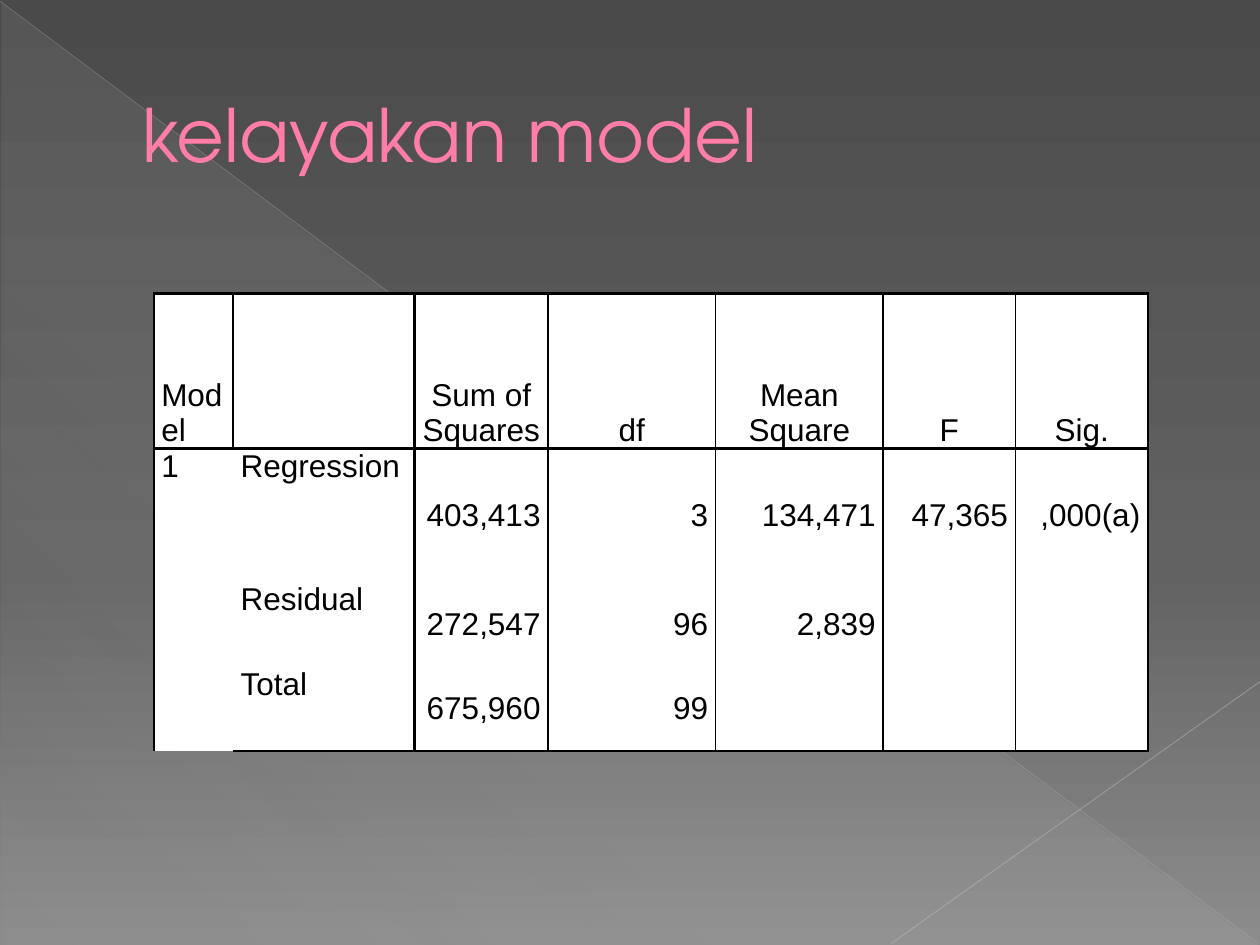
import pptx
import pptx.util
import pptx.oxml
from pptx.dml.color import RGBColor
from pptx.enum.shapes import MSO_CONNECTOR, MSO_SHAPE
from pptx.enum.text import MSO_ANCHOR, PP_ALIGN
from pptx.oxml.ns import nsdecls, qn
from pptx.util import Inches, Pt

BLACK = RGBColor(0x00, 0x00, 0x00)
WHITE = RGBColor(0xFF, 0xFF, 0xFF)
PINK = RGBColor(0xFF, 0x7D, 0xA7)
PALE = RGBColor(0xD2, 0xD2, 0xD2)
GREY = RGBColor(0xBF, 0xBF, 0xBF)
SILVER = RGBColor(0xC6, 0xC6, 0xC6)
DARK = RGBColor(0x4A, 0x4A, 0x4A)
MID = RGBColor(0x62, 0x62, 0x62)
LIGHT = RGBColor(0x8C, 0x8C, 0x8C)

COLS = [0.63, 1.44, 1.06, 1.33, 1.33, 1.05, 1.05]
ROWS = [1.23, 1.06, 0.67, 0.67]
DATA = [
    ["Model", "", "Sum of Squares", "df", "Mean Square", "F", "Sig."],
    ["1", "Regression", "403,413", "3", "134,471", "47,365", ",000(a)"],
    ["", "Residual", "272,547", "96", "2,839", "", ""],
    ["", "Total", "675,960", "99", "", "", ""],
]


def blend(fill, stops, angle):
    """Set a linear gradient from (position, colour, opacity) in percent."""
    fill.gradient()
    fill.gradient_angle = -angle % 360
    grad = fill.gradient_stops[0]._gs.getparent()
    for old in list(grad):
        grad.remove(old)
    for place, color, alpha in stops:
        grad.append(pptx.oxml.parse_xml(
            f'<a:gs {nsdecls("a")} pos="{place * 1000}"><a:srgbClr val="{color}">'
            f'<a:alpha val="{alpha * 1000}"/></a:srgbClr></a:gs>'))


def add_line(slide, start, end, color, width, alpha):
    line = slide.shapes.add_connector(
        MSO_CONNECTOR.STRAIGHT, *map(Inches, start + end))
    line.line.color.rgb = color
    line.line.width = Pt(width)
    props = line._element.spPr
    tint = props.find(".//" + qn("a:srgbClr"))
    tint.append(pptx.oxml.parse_xml(
        f'<a:alpha {nsdecls("a")} val="{alpha * 1000}"/>'))
    props.append(pptx.oxml.parse_xml(f'<a:effectLst {nsdecls("a")}/>'))


def add_back(slide, width, height):
    blend(slide.background.fill,
          [(0, DARK, 100), (60, MID, 100), (100, LIGHT, 100)], 90)
    wedge = slide.shapes.add_shape(
        MSO_SHAPE.RIGHT_TRIANGLE, Inches(0.01), Inches(0.02),
        Inches(width - 0.02), Inches(height - 0.02))
    wedge.shadow.inherit = False
    wedge.line.fill.background()
    blend(wedge.fill, [(0, PALE, 10), (70, PALE, 8), (100, PALE, 1)], 133)
    add_line(slide, (0, 0.01), (width - 0.01, height - 0.01), GREY, 0.39, 35)
    add_line(slide, (width, 5.41), (7.07, height - 0.01), SILVER, 0.47, 45)


def add_title(slide, text, left, top, width, height):
    box = slide.shapes.add_textbox(*map(Inches, (left, top, width, height)))
    frame = box.text_frame
    frame.word_wrap = True
    frame.vertical_anchor = MSO_ANCHOR.MIDDLE
    frame.text = text
    para = frame.paragraphs[0]
    para._p.get_or_add_pPr().set("marL", str(Inches(0.53)))
    font = para.runs[0].font
    font.name = "TeX Gyre Adventor"
    font.size = Pt(42)
    font.color.rgb = PINK


def upright(row, edge):
    """Width of the vertical rule at a column edge, 0 for none."""
    if edge == 1:
        return 1.5 if row == 0 else 0
    return 1.5 if edge in (0, 2, len(COLS)) else 1


def level(edge):
    """Width of the horizontal rule at a row edge, 0 for none."""
    return 1.5 if edge in (0, 1, len(ROWS)) else 0


def set_rules(cell, row, col):
    sides = {"lnL": upright(row, col), "lnR": upright(row, col + 1),
             "lnT": level(row), "lnB": level(row + 1)}
    props = cell._tc.get_or_add_tcPr()
    for place, (side, width) in enumerate(sides.items()):
        paint = (f'<a:solidFill><a:srgbClr val="{BLACK}"/></a:solidFill>'
                 if width else "<a:noFill/>")
        props.insert(place, pptx.oxml.parse_xml(
            f'<a:{side} {nsdecls("a")} w="{Pt(width)}">{paint}</a:{side}>'))


def set_text(cell, text, row, col):
    cell.margin_left = cell.margin_right = Inches(0.06)
    cell.margin_top = cell.margin_bottom = 0
    cell.text = text
    para = cell.text_frame.paragraphs[0]
    if row == 0:
        cell.vertical_anchor = MSO_ANCHOR.BOTTOM
        para.alignment = PP_ALIGN.CENTER if col else PP_ALIGN.LEFT
    elif col > 1:
        cell.vertical_anchor = MSO_ANCHOR.MIDDLE
        para.alignment = PP_ALIGN.RIGHT
    font = para.runs[0].font
    font.name = "Arial"
    font.size = Pt(18)
    font.color.rgb = BLACK


def add_grid(slide, left, top):
    table = slide.shapes.add_table(
        len(ROWS), len(COLS), Inches(left), Inches(top),
        Inches(sum(COLS)), Inches(sum(ROWS))).table
    table.first_row = table.horz_banding = False
    for col, width in enumerate(COLS):
        table.columns[col].width = Inches(width)
    for row, height in enumerate(ROWS):
        table.rows[row].height = Inches(height)
        for col, text in enumerate(DATA[row]):
            cell = table.cell(row, col)
            cell.fill.solid()
            cell.fill.fore_color.rgb = WHITE
            set_rules(cell, row, col)
            if text:
                set_text(cell, text, row, col)
    table.cell(1, 0).merge(table.cell(3, 0))


def main():
    deck = pptx.Presentation()
    deck.slide_width = Inches(10)
    deck.slide_height = Inches(7.5)
    slide = deck.slides.add_slide(deck.slide_layouts[6])
    add_back(slide, 10, 7.5)
    add_title(slide, "kelayakan model", 0.5, 0.29, 9, 1.53)
    add_grid(slide, 1.22, 2.33)
    deck.save("out.pptx")


if __name__ == "__main__":
    main()
